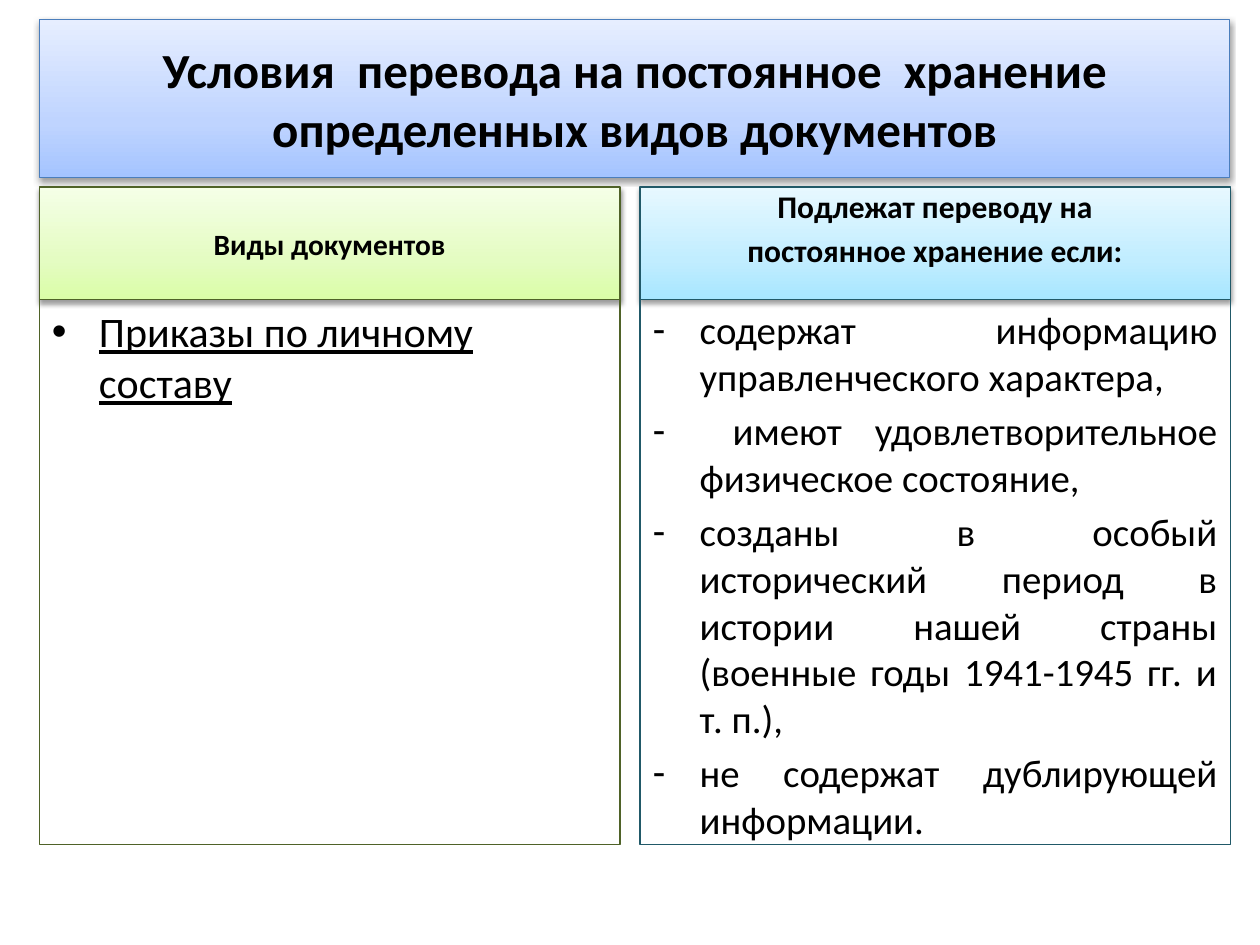
from copy import deepcopy

from lxml.etree import SubElement
from pptx import Presentation
from pptx.dml.color import RGBColor
from pptx.enum.text import MSO_ANCHOR, MSO_AUTO_SIZE, PP_ALIGN
from pptx.oxml.ns import qn
from pptx.util import Cm, Pt

COLORS = {
    "text": "000000",
    "shadow": "000000",
    "blue_line": "4B7EBC",
    "green_line": "4F6228",
    "aqua_line": "215968",
}
GRADIENTS = {
    "blue": ("A4C4FF", "BFD4FF", "E6EEFF"),
    "green": ("DAFDA7", "E4FCC2", "F5FFE7"),
    "aqua": ("A7E6FF", "C1EDFF", "E7F8FF"),
}
STOPS = (0, 0.35, 1)
HEADER_HEIGHT = 2.27


def place(shape, box, line):
    shape.left, shape.top, shape.width, shape.height = [Cm(value) for value in box]
    shape.line.color.rgb = RGBColor.from_string(COLORS[line])
    shape.line.width = Pt(0.75)


def fill_gradient(shape, name):
    shape.fill.gradient()
    shape.fill.gradient_angle = 90
    stop_list = shape._element.spPr.find(qn("a:gradFill")).find(qn("a:gsLst"))
    stop_list.append(deepcopy(stop_list[-1]))
    for stop, position, color in zip(shape.fill.gradient_stops, STOPS, GRADIENTS[name]):
        stop.position = position
        stop.color.rgb = RGBColor.from_string(color)
    linear = shape._element.spPr.find(qn("a:gradFill")).find(qn("a:lin"))
    linear.set("ang", str(270 * 60000))


def add_shadow(shape):
    effects = SubElement(shape._element.spPr, qn("a:effectLst"))
    shadow = SubElement(effects, qn("a:outerShdw"), blurRad=str(Pt(3.1)),
                        dist=str(Pt(1.6)), dir=str(90 * 60000), rotWithShape="0")
    color = SubElement(shadow, qn("a:srgbClr"), val=COLORS["shadow"])
    SubElement(color, qn("a:alpha"), val="38000")


def write(shape, text, size, align=PP_ALIGN.LEFT, bold=False, underline=False,
          anchor=MSO_ANCHOR.TOP, bullet=None):
    frame = shape.text_frame
    frame.text = text
    frame.word_wrap = True
    frame.auto_size = MSO_AUTO_SIZE.NONE
    frame.vertical_anchor = anchor
    for para in frame.paragraphs:
        para.alignment = align
        if bullet:
            properties = para._p.get_or_add_pPr()
            properties.set("marL", str(Cm(0.95)))
            properties.set("indent", str(-Cm(0.95)))
            SubElement(properties, qn("a:buChar"), char=bullet)
        for span in para.runs:
            span.font.name = "Calibri"
            span.font.size = Pt(size)
            span.font.bold = bold
            span.font.underline = underline
            span.font.color.rgb = RGBColor.from_string(COLORS["text"])


def build_banner(shape, box, theme, text, size):
    place(shape, box, f"{theme}_line")
    fill_gradient(shape, theme)
    add_shadow(shape)
    write(shape, text, size, align=PP_ALIGN.CENTER, bold=True, anchor=MSO_ANCHOR.MIDDLE)


def build_column(header, body, box, theme, title, title_size, items, **body_format):
    left, top, width, height = box
    build_banner(header, (left, top, width, HEADER_HEIGHT), theme, title, title_size)
    place(body, (left, top + HEADER_HEIGHT, width, height - HEADER_HEIGHT), f"{theme}_line")
    write(body, "\n".join(items), **body_format)


def main():
    deck = Presentation()
    deck.slide_width, deck.slide_height = Cm(25.4), Cm(19.05)
    page = deck.slides.add_slide(deck.slide_layouts[4])
    title, left_header, left_body, right_header, right_body = page.placeholders

    build_banner(title, (0.79, 0.4, 24, 3.18), "blue",
                 "Условия  перевода на постоянное  хранение определенных видов документов", 28)
    build_column(left_header, left_body, (0.79, 3.77, 11.71, 13.25), "green",
                 "Виды документов", 16.8, ["Приказы по личному составу"],
                 size=24, underline=True, bullet="•")
    build_column(right_header, right_body, (12.9, 3.77, 11.9, 13.25), "aqua",
                 "Подлежат переводу на\nпостоянное хранение если:", 18,
                 ["содержат информацию управленческого характера,",
                  " имеют удовлетворительное физическое состояние,",
                  "созданы в особый исторический период в истории нашей страны "
                  "(военные годы 1941-1945 гг. и т. п.),",
                  "не содержат дублирующей информации."],
                 size=22.2, align=PP_ALIGN.JUSTIFY, bullet="-")
    right_header.text_frame.margin_bottom = Cm(0.75)

    deck.save("out.pptx")


if __name__ == "__main__":
    main()
